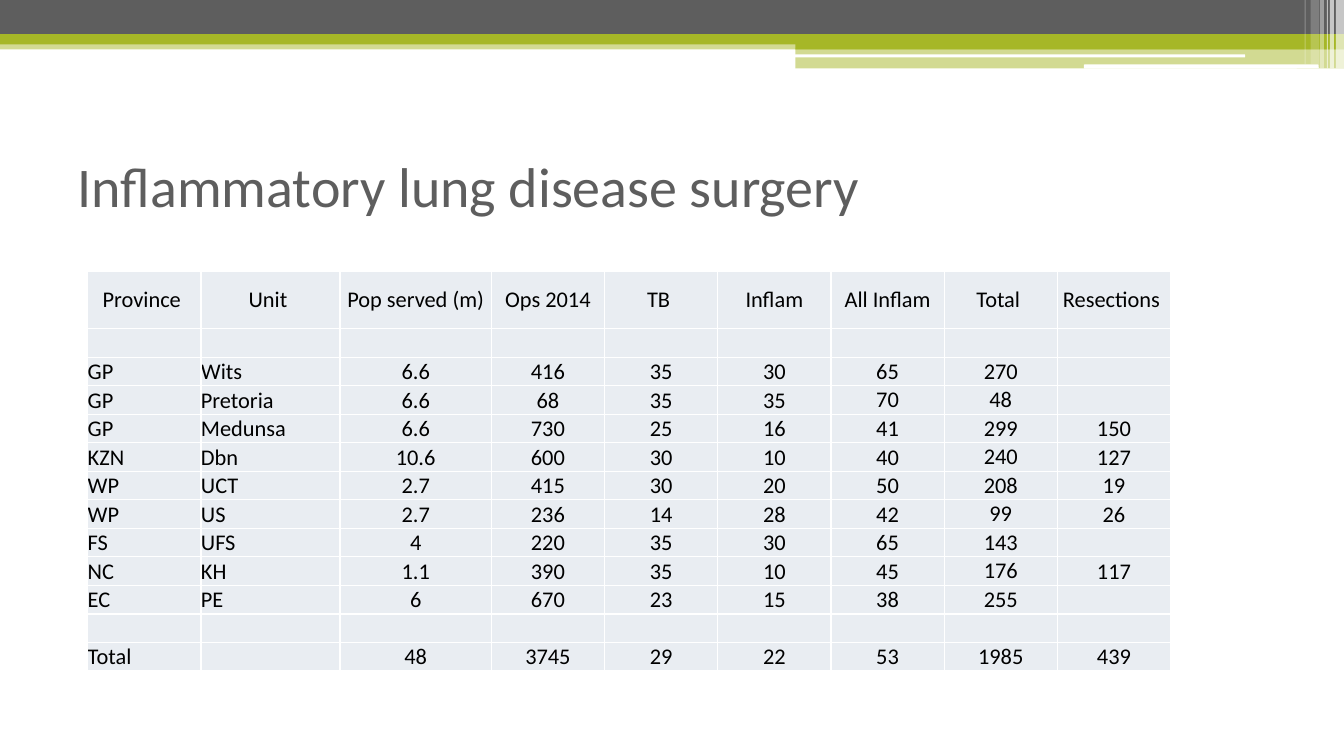
import pptx
import pptx.dml.color
import pptx.enum.shapes
import pptx.enum.text
import pptx.oxml
import pptx.oxml.ns
import pptx.util
from lxml import etree

Inches = pptx.util.Inches
Pt = pptx.util.Pt
qn = pptx.oxml.ns.qn
ALIGN = pptx.enum.text.PP_ALIGN
ANCHOR = pptx.enum.text.MSO_ANCHOR
SHAPE = pptx.enum.shapes.MSO_SHAPE

COLORS = {
    "gray": "5E5E5E",
    "green": "A6B727",
    "white": "FFFFFF",
    "cell": "E9EDF2",
    "black": "000000",
}

BANDS = [
    (0, 0.4, 13.33, 0.09, "green", 50),
    (0, 0, 13.33, 0.34, "gray", 100),
    (0, 0.34, 13.33, 0.1, "green", 100),
    (7.89, 0.39, 5.44, 0.1, "green", 100),
    (7.89, 0.48, 5.44, 0.2, "green", 50),
]
SLITS = [(7.88, 0.54, 4.47, 0.03), (10.75, 0.64, 2.33, 0.04)]
STRIPES = [
    (13.25, 0.08, 0.68, 65),
    (13.19, 0.04, 0.68, 65),
    (13.16, 0.01, 0.68, 60),
    (13.09, 0.04, 0.68, 40),
    (13, 0.08, 0.64, 20),
    (12.94, 0.01, 0.64, 30),
]

HEADERS = ["Province ", "Unit ", "Pop served (m)", "Ops 2014", "TB ",
           "Inflam", "All Inflam", "Total ", "Resections "]
BLANK = [""] * len(HEADERS)
ROWS = [
    HEADERS,
    BLANK,
    ["GP", "Wits", "6.6", "416", "35", "30", "65", "270", ""],
    ["GP", "Pretoria", "6.6", "68", "35", "35", "70", "48", ""],
    ["GP", "Medunsa", "6.6", "730", "25", "16", "41", "299", "150"],
    ["KZN", "Dbn", "10.6", "600", "30", "10", "40", "240", "127"],
    ["WP", "UCT", "2.7", "415", "30", "20", "50", "208", "19"],
    ["WP", "US", "2.7", "236", "14", "28", "42", "99", "26"],
    ["FS", "UFS", "4", "220", "35", "30", "65", "143", ""],
    ["NC", "KH", "1.1", "390", "35", "10", "45", "176", "117"],
    ["EC", "PE", "6", "670", "23", "15", "38", "255", ""],
    BLANK,
    ["Total", "", "48", "3745", "29", "22", "53", "1985", "439"],
]
TOTAL_COLUMN = HEADERS.index("Total ")
PRETORIA_ALL_INFLAM = (3, HEADERS.index("All Inflam"))


def rgb(color):
    return pptx.dml.color.RGBColor.from_string(COLORS[color])


def write_text(frame, text, size=16, color="black", font="Calibri",
               align=ALIGN.LEFT):
    para = frame.paragraphs[0]
    para.alignment = align
    if not text:
        etree.SubElement(para._p, qn("a:endParaRPr"), sz=str(size * 100))
        return
    span = para.add_run()
    span.text = text
    span.font.size = Pt(size)
    span.font.name = font
    span.font.bold = False
    span.font.color.rgb = rgb(color)


class SlideBuilder:
    def __init__(self, page, font="Calibri"):
        self.page = page
        self.font = font

    def bar(self, left, top, width, height, color, opacity=100,
            kind=SHAPE.RECTANGLE):
        box = self.page.shapes.add_shape(
            kind, Inches(left), Inches(top), Inches(width), Inches(height))
        box.shadow.inherit = False
        box.line.fill.background()
        box.fill.solid()
        box.fill.fore_color.rgb = rgb(color)
        if opacity < 100:
            tint = box.fill._xPr.find(".//" + qn("a:srgbClr"))
            etree.SubElement(tint, qn("a:alpha"), val=str(opacity * 1000))

    def title(self, text, left, top, width, height):
        box = self.page.shapes.title
        box.left, box.top = Inches(left), Inches(top)
        box.width, box.height = Inches(width), Inches(height)
        box.text_frame.word_wrap = True
        box.text_frame.vertical_anchor = ANCHOR.MIDDLE
        write_text(box.text_frame, text, size=40, color="gray", font=self.font)

    def borders(self, cell):
        properties = cell._tc.get_or_add_tcPr()
        for side in ("lnL", "lnR", "lnT", "lnB"):
            line = etree.SubElement(properties, qn("a:" + side), w=str(Pt(1)))
            fill = etree.SubElement(line, qn("a:solidFill"))
            etree.SubElement(fill, qn("a:srgbClr"), val=COLORS["white"])

    def cell(self, cell, text, align, anchor):
        cell.margin_left = cell.margin_right = 0
        cell.margin_top = cell.margin_bottom = 0
        cell.vertical_anchor = anchor
        self.borders(cell)
        cell.fill.solid()
        cell.fill.fore_color.rgb = rgb("cell")
        write_text(cell.text_frame, text, font=self.font, align=align)

    def table(self, rows, left, top, widths, heights):
        table = self.page.shapes.add_table(
            len(rows), len(widths), Inches(left), Inches(top),
            Inches(sum(widths)), Inches(sum(heights))).table
        table.first_row = table.horz_banding = False
        for column, width in zip(table.columns, widths):
            column.width = Inches(width)
        for row, height in zip(table.rows, heights):
            row.height = Inches(height)
        for r, values in enumerate(rows):
            for c, text in enumerate(values):
                centred = r == 0 or c >= 2
                middle = (r == 0 or c == TOTAL_COLUMN
                          or (r, c) == PRETORIA_ALL_INFLAM)
                self.cell(table.cell(r, c), text,
                          ALIGN.CENTER if centred else ALIGN.LEFT,
                          ANCHOR.MIDDLE if middle else ANCHOR.BOTTOM)


def main():
    deck = pptx.Presentation()
    deck.slide_width, deck.slide_height = Inches(13.33), Inches(7.5)
    builder = SlideBuilder(deck.slides.add_slide(deck.slide_layouts[5]))
    for band in BANDS:
        builder.bar(*band)
    for slit in SLITS:
        builder.bar(*slit, "white", kind=SHAPE.ROUNDED_RECTANGLE)
    for left, width, height, opacity in STRIPES:
        builder.bar(left, 0, width, height, "white", opacity)
    builder.title("Inflammatory lung disease surgery", 0.67, 1.25, 12, 1.17)
    number_width = (10.74 - 1.38 - 1.5) / 7
    row_height = (3.97 - 0.57) / 12
    builder.table(ROWS, 0.87, 2.69,
                  [number_width, 1.38, 1.5] + [number_width] * 6,
                  [0.57] + [row_height] * 12)
    deck.save("out.pptx")


if __name__ == "__main__":
    main()
